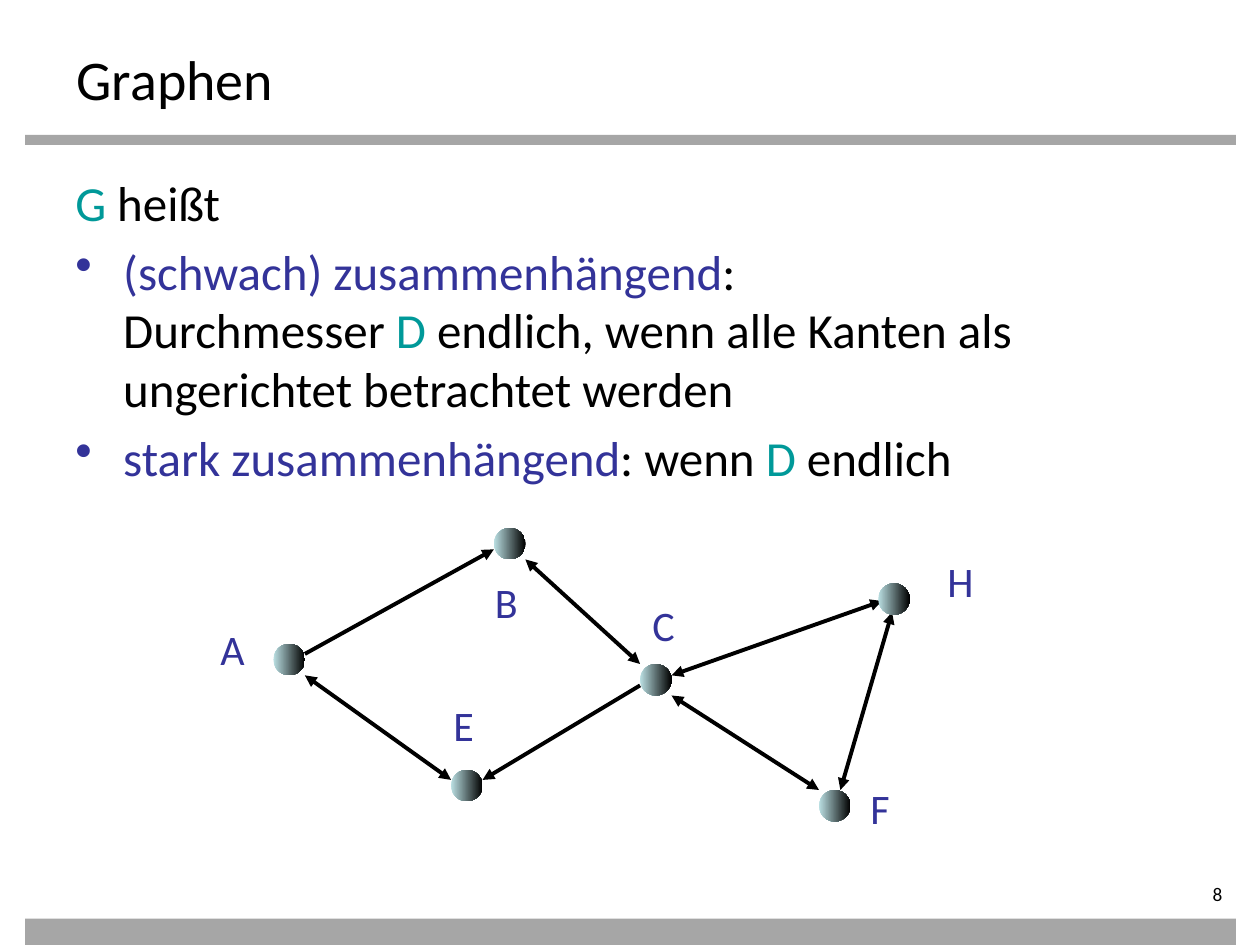
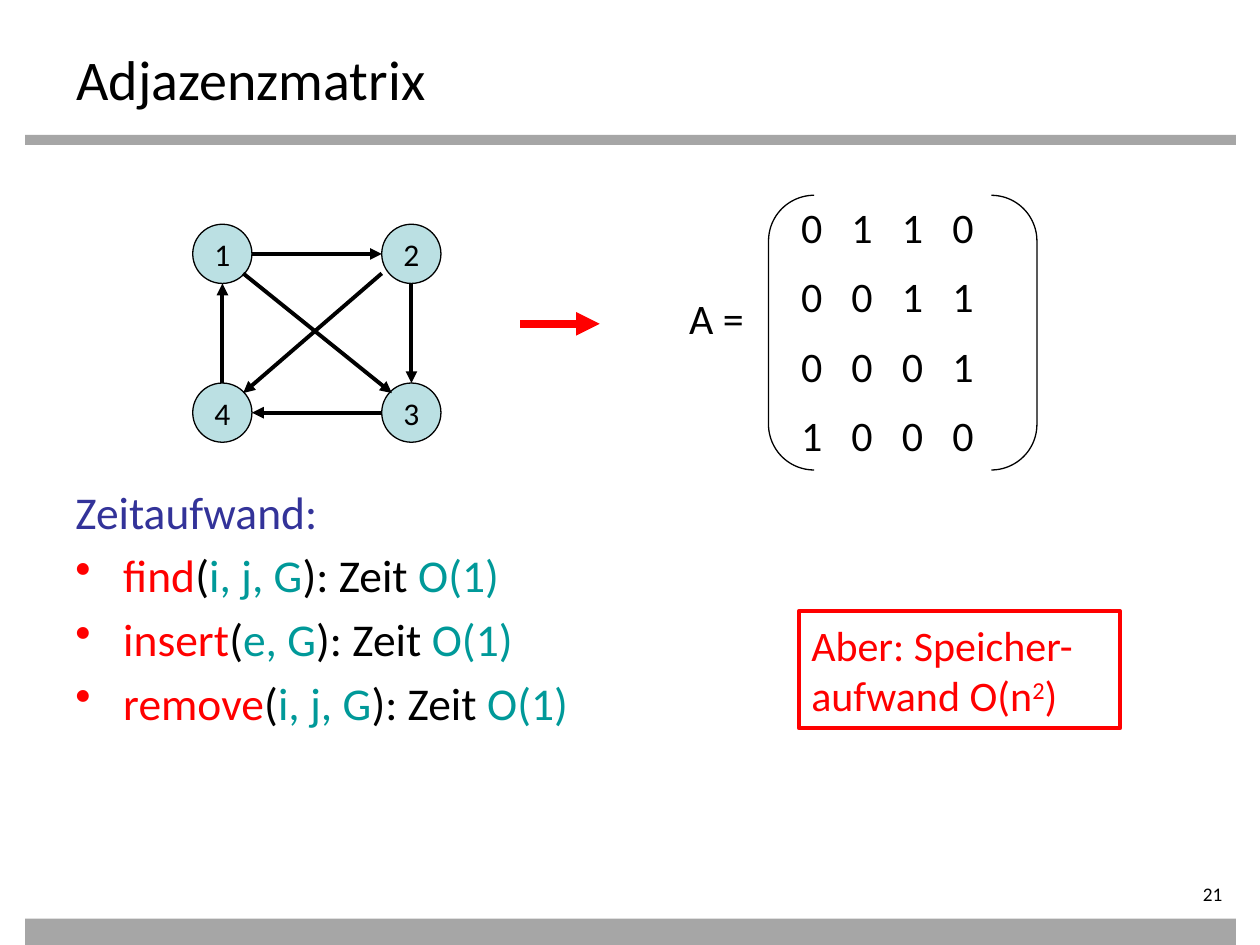
from dataclasses import dataclass
from math import hypot
from typing import NamedTuple

from lxml.etree import SubElement
from pptx import Presentation
from pptx.dml.color import RGBColor as Rgb
from pptx.enum.shapes import MSO_CONNECTOR as Conn, MSO_SHAPE as Form
from pptx.enum.text import MSO_ANCHOR as Anchor, PP_ALIGN as Align
from pptx.oxml.ns import qn
from pptx.util import Inches, Pt


@dataclass(frozen=True)
class Theme:
    font: str = "Calibri"
    black: str = "000000"
    grey: str = "A6A6A6"
    blue: str = "333399"
    teal: str = "009999"
    red: str = "FF0000"
    pale: str = "BBE0E3"
    title: int = 32
    body: int = 28
    list: int = 26
    label: int = 24
    node: int = 18
    page: int = 11


class Box(NamedTuple):
    x: float
    y: float
    w: float
    h: float


class Edge(NamedTuple):
    x1: float
    y1: float
    x2: float
    y2: float
    head: bool = False
    tail: bool = True
    color: str = "000000"
    width: float = 2.25


class Node(NamedTuple):
    name: str
    x: float
    y: float
    label: Box


class Bit(NamedTuple):
    text: str
    color: str
    sup: bool = False


class Para(NamedTuple):
    bits: list[Bit]
    bullet: bool = False


T = Theme()
BREAK = Bit("\v", T.black)


# Shared drawing helpers
def style(run, size: int, color: str) -> None:
    font = run.font
    font.name, font.size = T.font, Pt(size)
    font.color.rgb = Rgb.from_string(color)


def place(box: Box) -> list:
    return [Inches(v) for v in box]


def write(slide, box: Box, text: str, size: int, color: str = T.black):
    frame = slide.shapes.add_textbox(*place(box)).text_frame
    frame.word_wrap = True
    frame.text = text
    for run in frame.paragraphs[0].runs:
        style(run, size, color)
    return frame


def fill_text(frame, paras: list[Para], size: int, gap: float) -> None:
    frame.word_wrap = True
    for i, para in enumerate(paras):
        p = frame.add_paragraph() if i else frame.paragraphs[0]
        p.alignment = Align.LEFT
        if i and gap:
            p.space_before = Pt(gap * size)
        if para.bullet:
            props = p._p.get_or_add_pPr()
            props.set("marL", str(Inches(0.38)))
            props.set("indent", str(-Inches(0.38)))
            SubElement(props, qn("a:buChar")).set("char", "•")
        for bit in para.bits:
            if bit == BREAK:
                p.add_line_break()
                continue
            run = p.add_run()
            run.text = bit.text
            style(run, size, bit.color)
            if bit.sup:
                run.font._element.set("baseline", "30000")


def draw(slide, form: Form, box: Box, fill: str = "", line: str = "",
         width: float = 0.75):
    shape = slide.shapes.add_shape(form, *place(box))
    shape.shadow.inherit = False
    if fill:
        shape.fill.solid()
        shape.fill.fore_color.rgb = Rgb.from_string(fill)
    else:
        shape.fill.background()
    if line:
        shape.line.color.rgb = Rgb.from_string(line)
        shape.line.width = Pt(width)
    else:
        shape.line.fill.background()
    return shape


def link(slide, edge: Edge) -> None:
    ends = [Inches(v) for v in edge[:4]]
    wire = slide.shapes.add_connector(Conn.STRAIGHT, *ends)
    wire.line.color.rgb = Rgb.from_string(edge.color)
    wire.line.width = Pt(edge.width)
    props = wire._element.spPr
    ln = props.find(qn("a:ln"))
    for tag, used in (("a:headEnd", edge.head), ("a:tailEnd", edge.tail)):
        if used:
            SubElement(ln, qn(tag)).set("type", "triangle")
    SubElement(props, qn("a:effectLst"))


def start(deck, title: str, page: int):
    """Add a slide with bands, title and page number."""
    slide = deck.slides.add_slide(deck.slide_layouts[6])
    for y, h in ((1.07, 0.08), (7.29, 0.21)):
        draw(slide, Form.RECTANGLE, Box(0.2, y, 9.61, h), T.grey)
    frame = write(slide, Box(8.7, 7, 1.1, 0.22), str(page), T.page)
    frame.margin_left = frame.margin_top = frame.margin_bottom = 0
    frame.paragraphs[0].alignment = Align.RIGHT
    write(slide, Box(0.51, 0.3, 9, 0.55), title, T.title)
    return slide


def add_body(slide, box: Box, paras: list[Para], size: int) -> None:
    frame = slide.shapes.add_textbox(*place(box)).text_frame
    fill_text(frame, paras, size, 0.2)


# Slide: connected graphs
BALL = 0.25
NODES = [
    Node("A", 2.17, 5.11, Box(1.65, 4.9, 0.42, 0.5)),
    Node("B", 3.92, 4.19, Box(3.83, 4.53, 0.42, 0.5)),
    Node("C", 5.08, 5.27, Box(5.08, 4.71, 0.44, 0.5)),
    Node("E", 3.58, 6.11, Box(3.5, 5.5, 0.42, 0.5)),
    Node("F", 6.5, 6.27, Box(6.81, 6.16, 0.37, 0.5)),
    Node("H", 6.97, 4.63, Box(7.42, 4.36, 0.42, 0.5)),
]
EDGES = [
    Edge(2.42, 5.19, 3.92, 4.36),
    Edge(2.42, 5.36, 3.58, 6.19, head=True),
    Edge(3.83, 6.19, 5.08, 5.44, head=True, tail=False),
    Edge(4.17, 4.44, 5.08, 5.27, head=True),
    Edge(5.33, 5.36, 7, 4.77, head=True),
    Edge(5.33, 5.52, 6.5, 6.27, head=True),
    Edge(7.08, 4.86, 6.67, 6.27, head=True),
]


def graph_slide(deck) -> None:
    slide = start(deck, "Graphen", 8)
    add_body(slide, Box(0.5, 1.32, 9, 2.7), [
        Para([Bit("G", T.teal), Bit(" heißt", T.black)]),
        Para([Bit("(schwach) zusammenhängend", T.blue), Bit(":", T.black),
              BREAK, Bit("Durchmesser ", T.black), Bit("D", T.teal),
              Bit(" endlich, wenn alle Kanten als ungerichtet "
                  "betrachtet werden", T.black)], True),
        Para([Bit("stark zusammenhängend", T.blue), Bit(": wenn ", T.black),
              Bit("D", T.teal), Bit(" endlich", T.black)], True),
    ], T.body)
    for edge in EDGES:
        link(slide, edge)
    for node in NODES:
        ball = draw(slide, Form.OVAL, Box(node.x, node.y, BALL, BALL))
        ball.fill.gradient()
        ball.fill.gradient_angle = 0
        shades = zip(ball.fill.gradient_stops, (T.pale, T.black), (0, 1))
        for stop, color, pos in shades:
            stop.color.rgb = Rgb.from_string(color)
            stop.position = pos
        write(slide, node.label, node.name, T.label, T.blue)


# Slide: adjacency matrix
DISC = 0.47
SPOTS = {1: (1.53, 1.78), 2: (3.03, 1.78), 3: (3.03, 3.04), 4: (1.53, 3.04)}
SIDES = [(1, 2), (2, 3), (3, 4), (4, 1)]
CROSS = [Edge(1.93, 2.17, 3.11, 3.12), Edge(3.03, 2.17, 1.93, 3.12)]
ROWS = ["0110", "0011", "0001", "1000"]
CALLS = [("find", "i, j, G"), ("insert", "e, G"), ("remove", "i, j, G")]


def side(a: int, b: int) -> Edge:
    """Edge from rim to rim along the line between two discs."""
    half = DISC / 2
    x1, y1, x2, y2 = (v + half for v in SPOTS[a] + SPOTS[b])
    size = hypot(x2 - x1, y2 - y1)
    dx, dy = half * (x2 - x1) / size, half * (y2 - y1) / size
    return Edge(x1 + dx, y1 + dy, x2 - dx, y2 - dy)


def add_matrix(slide) -> None:
    for i, row in enumerate(ROWS):
        box = Box(6.26, 1.55 + 0.55 * i, 1.77, 0.5)
        frame = write(slide, box, "\t".join(row), T.label)
        props = frame.paragraphs[0]._p.get_or_add_pPr()
        tabs = SubElement(props, qn("a:tabLst"))
        for col in range(1, len(row)):
            tab = SubElement(tabs, qn("a:tab"))
            tab.set("pos", str(Inches(0.4 * col)))
            tab.set("algn", "l")
    pair = draw(slide, Form.DOUBLE_BRACKET, Box(6.1, 1.55, 2.13, 2.18),
                line=T.black)
    pair.adjustments[0] = 0.17
    write(slide, Box(5.37, 2.27, 0.71, 0.5), "A =", T.label)


def matrix_slide(deck) -> None:
    slide = start(deck, "Adjazenzmatrix", 21)
    paras = [Para([Bit("Zeitaufwand:", T.blue)])]
    for name, args in CALLS:
        paras.append(Para([
            Bit(name, T.red), Bit("(", T.black), Bit(args, T.teal),
            Bit("): Zeit ", T.black), Bit("O(1)", T.teal)], True))
    add_body(slide, Box(0.5, 3.79, 5.5, 2.2), paras, T.list)

    # Directed graph
    for name, (x, y) in SPOTS.items():
        disc = draw(slide, Form.OVAL, Box(x, y, DISC, DISC), T.pale, T.black)
        frame = disc.text_frame
        frame.margin_left = frame.margin_right = 0
        frame.margin_top = frame.margin_bottom = 0
        frame.vertical_anchor = Anchor.MIDDLE
        frame.text = str(name)
        frame.paragraphs[0].alignment = Align.CENTER
        style(frame.paragraphs[0].runs[0], T.node, T.black)
    for edge in [side(a, b) for a, b in SIDES] + CROSS:
        link(slide, edge)
    link(slide, Edge(4.13, 2.57, 4.76, 2.57, color=T.red, width=4.5))

    add_matrix(slide)

    # Warning on memory use
    note = draw(slide, Form.RECTANGLE, Box(6.34, 4.85, 2.55, 0.93),
                line=T.red, width=2.25)
    fill_text(note.text_frame, [
        Para([Bit("Aber: Speicher-", T.red)]),
        Para([Bit("aufwand O(n", T.red), Bit("2", T.red, True),
              Bit(")", T.red)]),
    ], T.label, 0)


def main() -> None:
    deck = Presentation()
    deck.slide_width, deck.slide_height = Inches(10), Inches(7.5)
    graph_slide(deck)
    matrix_slide(deck)
    deck.save("out.pptx")


if __name__ == "__main__":
    main()
